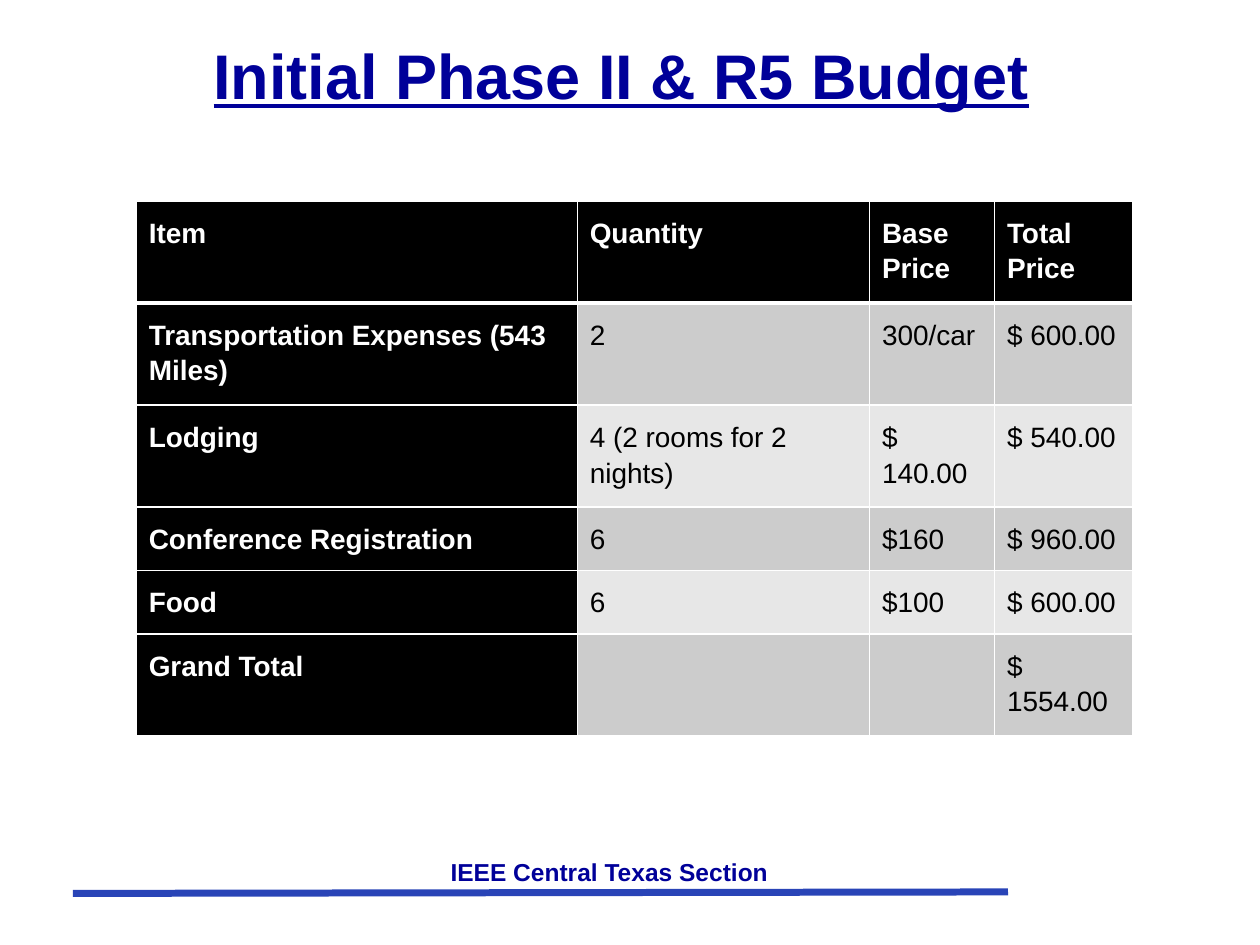
"""Build the initial Phase II and R5 budget slide."""
from lxml import etree
from pptx import Presentation
from pptx.dml.color import RGBColor
from pptx.enum.shapes import MSO_CONNECTOR
from pptx.enum.text import MSO_ANCHOR, PP_ALIGN
from pptx.oxml.ns import qn
from pptx.util import Cm, Pt

STRAIGHT = MSO_CONNECTOR.STRAIGHT
MIDDLE, TOP = MSO_ANCHOR.MIDDLE, MSO_ANCHOR.TOP
CENTER, LEFT = PP_ALIGN.CENTER, PP_ALIGN.LEFT

COLORS = {
    "navy": "000099",
    "rule": "2944B7",
    "black": "000000",
    "white": "FFFFFF",
    "dark band": "CCCCCC",
    "light band": "E7E7E7",
}
BUDGET = [
    ["Item", "Quantity", "Base Price", "Total Price"],
    ["Transportation Expenses (543 Miles)", "2", "300/car", "$ 600.00"],
    ["Lodging", "4 (2 rooms for 2 nights)", "$ 140.00", "$ 540.00"],
    ["Conference Registration", "6", "$160", "$ 960.00"],
    ["Food", "6", "$100", "$ 600.00"],
    ["Grand Total", "", "", "$ 1554.00"],
]
COLUMN_WIDTHS = [8.89, 5.89, 2.52, 2.79]
ROW_HEIGHTS = [1.98, 1.98, 1.98, 1.21, 1.21, 1.98]


class SlideBuilder:
    """Hold the style and the current slide."""

    font_name = "Arial"

    def __init__(self, slide):
        """Keep the slide to draw on."""
        self.slide = slide

    def color(self, name):
        """Return the named colour."""
        return RGBColor.from_string(COLORS[name])

    def set_text(self, frame, text, color, alignment, spacing=1.0, **formats):
        """Put one formatted paragraph into a text frame."""
        frame.text = text
        frame.word_wrap = True
        paragraph = frame.paragraphs[0]
        paragraph.alignment = alignment
        paragraph.line_spacing = spacing
        paragraph.space_before = Pt(0)
        for run in paragraph.runs:
            run.font.name = self.font_name
            run.font.color.rgb = self.color(color)
            for name, value in formats.items():
                setattr(run.font, name, value)

    def place(self, shape, left, top, width, height):
        """Move and size a shape in centimetres."""
        box = {"left": left, "top": top, "width": width, "height": height}
        for name, value in box.items():
            setattr(shape, name, Cm(value))

    def title(self, text, *box):
        """Fill the title placeholder."""
        shape = self.slide.shapes.title
        self.place(shape, *box)
        shape.text_frame.vertical_anchor = MIDDLE
        self.set_text(shape.text_frame, text, "navy", CENTER,
                      size=Pt(36), bold=True, underline=True)

    def footer(self, text, *box):
        """Add the centred section name."""
        shape = self.slide.shapes.add_textbox(*map(Cm, box))
        self.set_text(shape.text_frame, text, "navy", CENTER, size=Pt(14), bold=True)

    def rule(self, *ends):
        """Add a thick line without a shadow."""
        line = self.slide.shapes.add_connector(STRAIGHT, *map(Cm, ends))
        line.line.color.rgb = self.color("rule")
        line.line.width = Pt(4)
        etree.SubElement(line._element.spPr, qn("a:effectLst"))

    def borders(self, cell, row):
        """Draw white cell borders, thicker under the header row."""
        widths = {"L": 1, "R": 1, "T": 3 if row == 1 else 1, "B": 3 if row == 0 else 1}
        properties = cell._tc.get_or_add_tcPr()
        for side, width in widths.items():
            border = etree.SubElement(properties, qn(f"a:ln{side}"), w=str(Pt(width)))
            fill = etree.SubElement(border, qn("a:solidFill"))
            etree.SubElement(fill, qn("a:srgbClr"), val=COLORS["white"])

    def cell(self, cell, text, row, column):
        """Style and fill one table cell."""
        heading = row == 0 or column == 0
        band = "dark band" if row % 2 else "light band"
        self.borders(cell, row)
        cell.fill.solid()
        cell.fill.fore_color.rgb = self.color("black" if heading else band)
        for side in ("left", "right", "top", "bottom"):
            setattr(cell, f"margin_{side}", Cm(0.25))
        cell.vertical_anchor = TOP
        self.set_text(cell.text_frame, text, "white" if heading else "black", LEFT,
                      spacing=1.15, size=Pt(16), bold=heading)

    def table(self, rows, widths, heights, left, top):
        """Add a table with a header row and a header column."""
        box = map(Cm, (left, top, sum(widths), sum(heights)))
        table = self.slide.shapes.add_table(len(rows), len(widths), *box).table
        table.first_col = True
        for column, width in zip(table.columns, widths):
            column.width = Cm(width)
        for row, height in zip(table.rows, heights):
            row.height = Cm(height)
        for row, texts in enumerate(rows):
            for column, text in enumerate(texts):
                self.cell(table.cell(row, column), text, row, column)


def main():
    """Build and save the presentation."""
    presentation = Presentation()
    presentation.slide_width, presentation.slide_height = Cm(25.4), Cm(19.05)
    slide = presentation.slides.add_slide(presentation.slide_layouts[5])
    builder = SlideBuilder(slide)
    builder.rule(1.47, 18.01, 20.32, 17.98)
    builder.footer("IEEE Central Texas Section", 4.45, 17.15, 15.67, 0.84)
    builder.title("Initial Phase II & R5 Budget", 1.73, 0.64, 21.59, 1.7)
    builder.table(BUDGET, COLUMN_WIDTHS, ROW_HEIGHTS, 2.75, 4.05)
    presentation.save("out.pptx")


if __name__ == "__main__":
    main()
